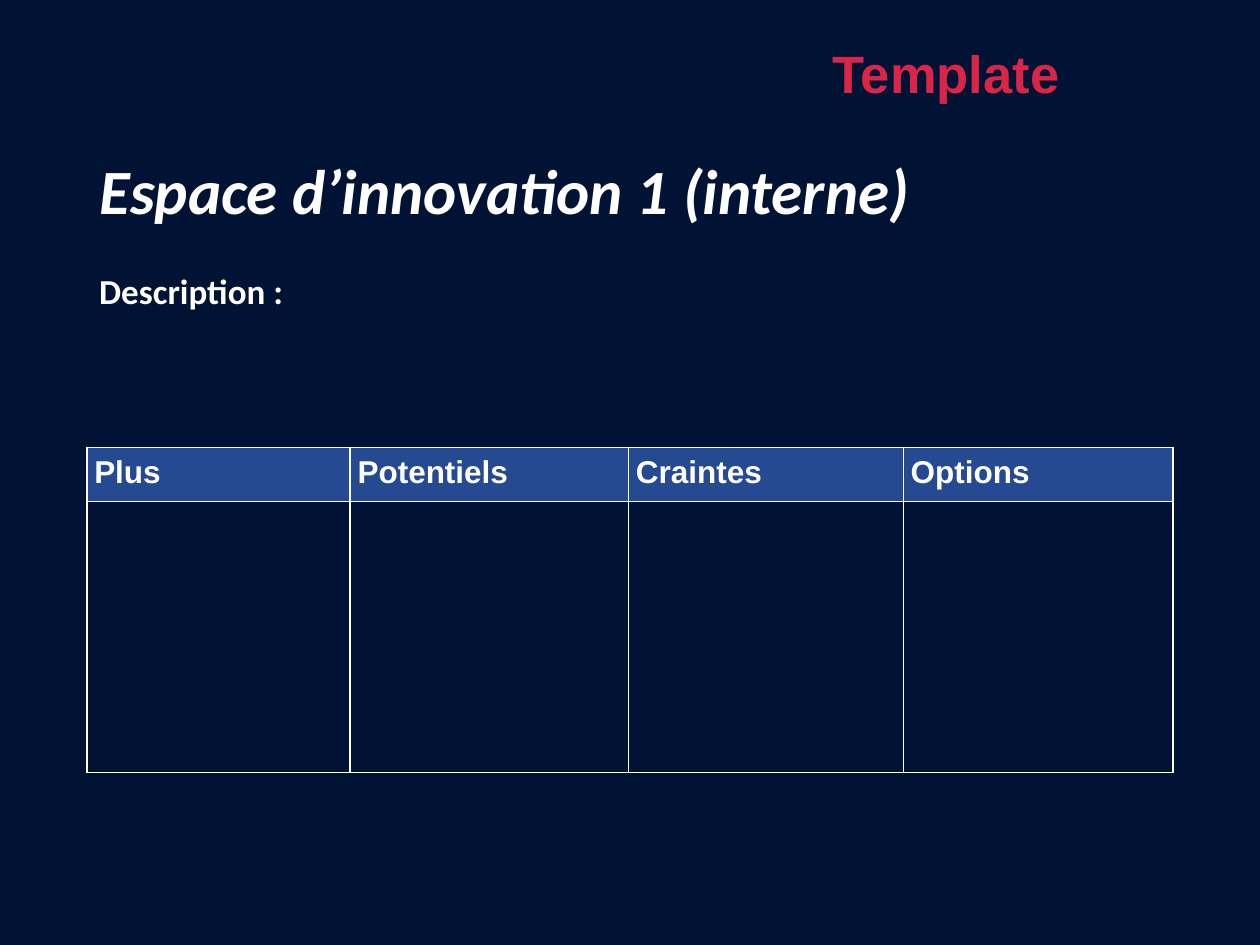
"""Build the innovation space slide with its four-column evaluation table."""
from typing import NamedTuple

from lxml import etree
from pptx import Presentation
from pptx import util as u
from pptx.dml.color import RGBColor
from pptx.enum import text as t
from pptx.oxml import ns

NAVY = RGBColor(0x01, 0x13, 0x35)
BLUE = RGBColor(0x25, 0x4A, 0x92)
RED = RGBColor(0xDB, 0x25, 0x46)
WHITE = RGBColor(0xFF, 0xFF, 0xFF)
LEFT, WIDTH = 1.75, 21.9


class Column(NamedTuple):
    head: str
    width: float


COLUMNS = [
    Column("Plus", 5.31),
    Column("Potentiels", 5.61),
    Column("Craintes", 5.54),
    Column("Options", 5.44),
]
ROWS = [1.09, 5.46]


def write(frame, words: str, *, size: float, font: str = "Calibri",
          color: RGBColor = WHITE, italic: bool = False) -> None:
    para = frame.paragraphs[0]
    para.alignment = t.PP_ALIGN.LEFT
    run = para.add_run()
    run.text = words
    face = run.font
    face.name, face.size = font, u.Pt(size)
    face.bold, face.italic = True, italic
    face.color.rgb = color


def add_box(slide, left: float, top: float, width: float, height: float):
    area = [u.Cm(n) for n in (left, top, width, height)]
    frame = slide.shapes.add_textbox(*area).text_frame
    frame.word_wrap = True
    return frame


def add_title(slide, words: str) -> None:
    title = slide.shapes.title
    title.left, title.top = u.Cm(LEFT), u.Cm(2.08)
    title.width, title.height = u.Cm(WIDTH), u.Cm(3.68)
    frame = title.text_frame
    frame.vertical_anchor = t.MSO_ANCHOR.MIDDLE
    frame.auto_size = t.MSO_AUTO_SIZE.NONE
    frame.paragraphs[0].line_spacing = 0.9
    write(frame, words, size=36, italic=True)


def add_edges(cell, color: RGBColor) -> None:
    props = cell._tc.get_or_add_tcPr()
    for side in ("lnL", "lnR", "lnT", "lnB"):
        line = etree.SubElement(props, ns.qn(f"a:{side}"), w=str(u.Pt(1)))
        fill = etree.SubElement(line, ns.qn("a:solidFill"))
        etree.SubElement(fill, ns.qn("a:srgbClr"), val=str(color))


def add_grid(slide, columns: list[Column], rows: list[float]) -> None:
    table = slide.shapes.add_table(
        len(rows), len(columns), u.Cm(LEFT), u.Cm(9.02),
        u.Cm(WIDTH), u.Cm(sum(rows))).table
    table.horz_banding = False
    for row, height in zip(table.rows, rows):
        row.height = u.Cm(height)
    for index, column in enumerate(columns):
        table.columns[index].width = u.Cm(column.width)
        head, body = table.cell(0, index), table.cell(1, index)
        for cell in (head, body):
            add_edges(cell, WHITE)
        head.margin_left = head.margin_right = u.Cm(0.15)
        head.margin_top = head.margin_bottom = u.Cm(0.15)
        head.fill.solid()
        head.fill.fore_color.rgb = BLUE
        body.fill.background()
        write(head.text_frame, column.head, size=18, font="Arial")


def main() -> None:
    deck = Presentation()
    deck.slide_width, deck.slide_height = u.Cm(25.4), u.Cm(19.05)
    slide = deck.slides.add_slide(deck.slide_layouts[5])
    slide.background.fill.solid()
    slide.background.fill.fore_color.rgb = NAVY
    add_grid(slide, COLUMNS, ROWS)
    add_title(slide, "Espace d’innovation 1 (interne)")
    write(add_box(slide, LEFT, 5.31, WIDTH, 3.33), "Description :", size=20)
    label = add_box(slide, 16.54, 0.58, 5.23, 1.8)
    label.margin_top = label.margin_bottom = u.Cm(0.25)
    write(label, "Template", size=30, font="Arial", color=RED)
    deck.save("out.pptx")


if __name__ == "__main__":
    main()
